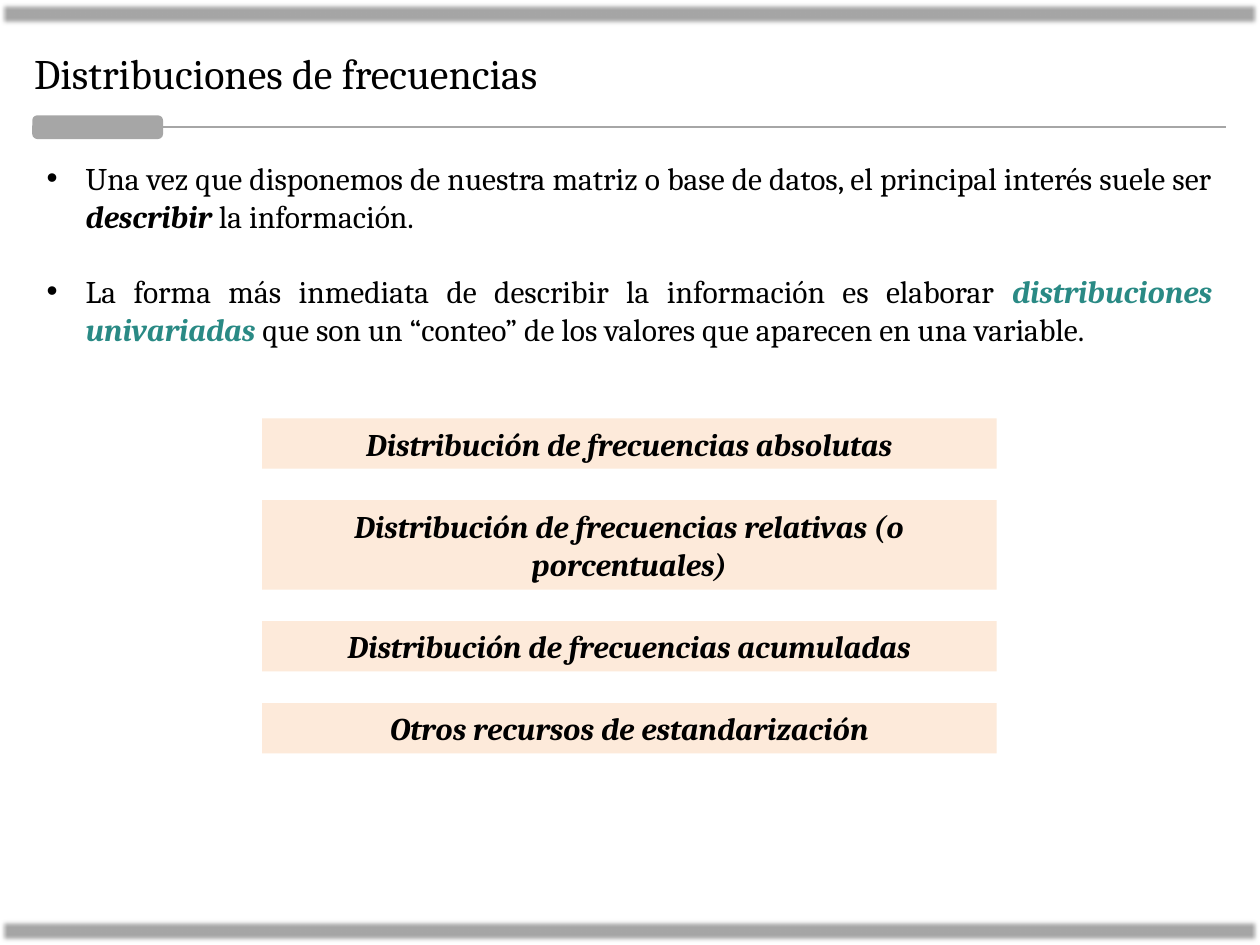
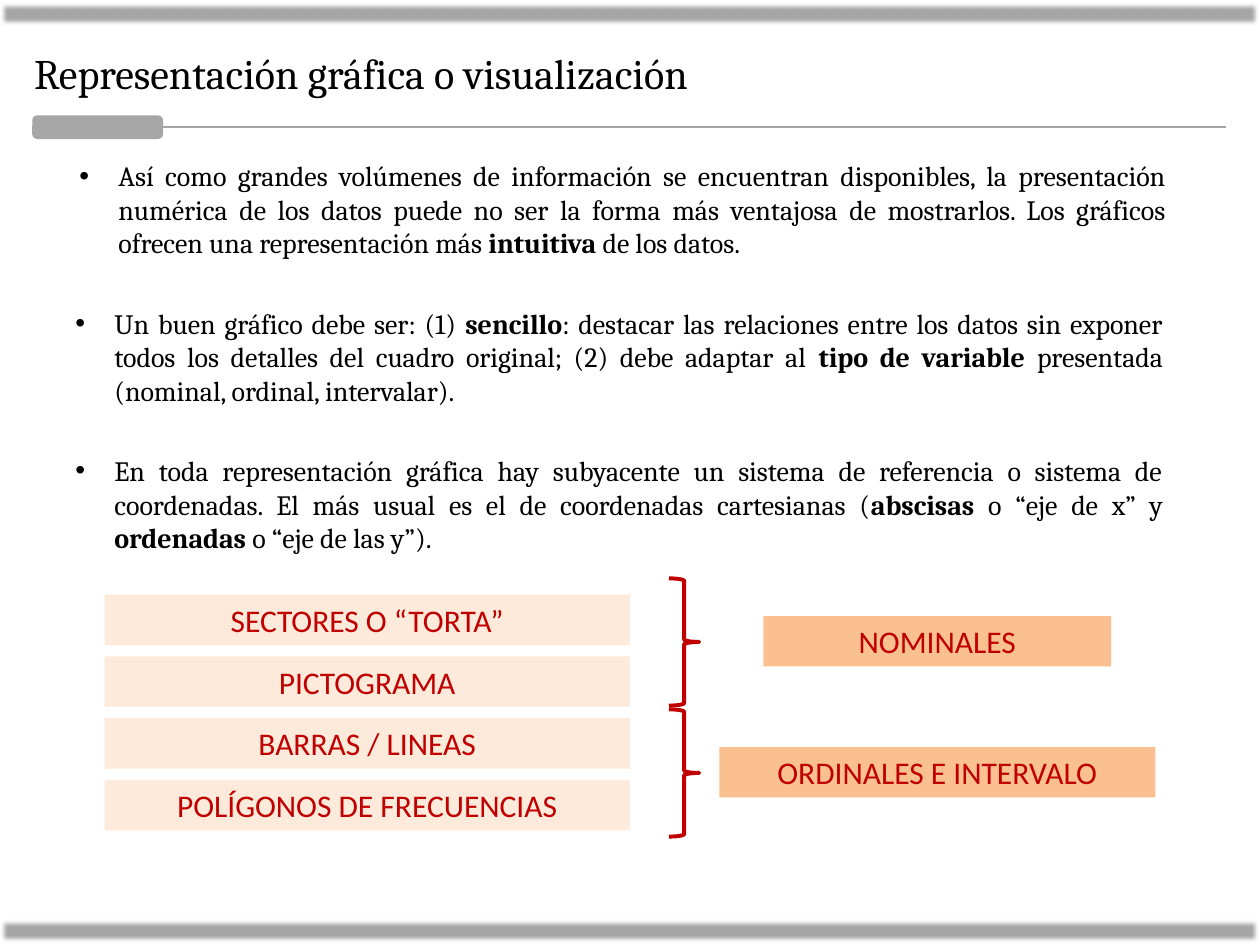
from lxml import etree
from pptx import Presentation
from pptx.dml.color import RGBColor as RGB
from pptx.enum.shapes import MSO_CONNECTOR as LINE, MSO_SHAPE as SHAPE
from pptx.enum.text import MSO_ANCHOR as ANCHOR, MSO_AUTO_SIZE as FIT, PP_ALIGN as ALIGN
from pptx.oxml.ns import qn
from pptx.util import Inches, Pt

HUES = {
    "ink": "000000",
    "grey": "A6A6A6",
    "teal": "2A8A85",
    "red": "C00000",
    "cream": "FDEADA",
    "peach": "FAC090",
}
SERIF, SANS = "Cambria", "Calibri"


def hue(name):
    return RGB.from_string(HUES[name])


class Deck:
    """Shared style and the slide being built."""

    def __init__(self):
        self.prs = Presentation()
        self.prs.slide_width, self.prs.slide_height = Inches(10), Inches(7.5)
        self.slide = None

    def start(self, title):
        """Add a slide with its title, bands and heading rule."""
        self.slide = self.prs.slides.add_slide(self.prs.slide_layouts[1])
        head = self.slide.shapes.title
        self.place(head, 0.17, 0.33, 9.56, 0.5)
        head.text_frame.vertical_anchor = ANCHOR.MIDDLE
        para = head.text_frame.paragraphs[0]
        para.text = title
        self.style(para, 24, align=ALIGN.LEFT)
        for top in (0.01, 7.29):
            self.band(top)
        self.shape(SHAPE.ROUNDED_RECTANGLE, 0.27, 0.93, 1.01, 0.16, "grey", "grey", 2)
        self.rule(1.23, 9.73, 1.01)

    def place(self, item, left, top, width, height):
        item.left, item.top = Inches(left), Inches(top)
        item.width, item.height = Inches(width), Inches(height)

    def style(self, para, size, face=SERIF, tint="ink", align=ALIGN.CENTER):
        para.alignment = align
        para.font.size, para.font.name = Pt(size), face
        para.font.color.rgb = hue(tint)

    def shape(self, kind, left, top, width, height, fill=None, line=None, weight=1):
        item = self.slide.shapes.add_shape(
            kind, Inches(left), Inches(top), Inches(width), Inches(height))
        item.shadow.inherit = False
        if fill:
            item.fill.solid()
            item.fill.fore_color.rgb = hue(fill)
        else:
            item.fill.background()
        if line:
            item.line.color.rgb = hue(line)
            item.line.width = Pt(weight)
        else:
            item.line.fill.background()
        return item

    def band(self, top):
        """Draw a full-width grey band with soft edges."""
        item = self.shape(SHAPE.RECTANGLE, 0, top, 10, 0.2, "grey")
        effects = item.element.spPr.find(qn("a:effectLst"))
        etree.SubElement(effects, qn("a:softEdge"), rad=str(Pt(2.5)))

    def rule(self, left, right, top):
        line = self.slide.shapes.add_connector(
            LINE.STRAIGHT, Inches(left), Inches(top), Inches(right), Inches(top))
        line.line.color.rgb = hue("grey")
        line.line.width = Pt(1.25)
        etree.SubElement(line.element.spPr, qn("a:effectLst"))

    def label(self, text, left, top, width, height=0.4, fill="cream",
              face=SANS, tint="red", strong=False):
        item = self.shape(SHAPE.RECTANGLE, left, top, width, height, fill)
        para = item.text_frame.paragraphs[0]
        para.text = text
        self.style(para, 18, face, tint)
        if strong:
            para.font.bold = para.font.italic = True

    def body(self):
        return self.slide.placeholders[1]

    def box(self):
        return self.slide.shapes.add_textbox(0, 0, 0, 0)

    def bullets(self, item, spot, size, items, gap=0, slant=False):
        """Fill a text item; each entry is (text, tint of its |marked| words)."""
        self.place(item, *spot)
        frame = item.text_frame
        frame.word_wrap = True
        frame.auto_size = FIT.SHAPE_TO_FIT_TEXT
        for i, (text, tint) in enumerate(items):
            para = frame.add_paragraph() if i else frame.paragraphs[0]
            para.space_before, para.space_after = Pt(0), Pt(gap)
            self.dot(para)
            self.style(para, size, align=ALIGN.JUSTIFY)
            for j, part in enumerate(text.split("|")):
                run = para.add_run()
                run.text = part
                if j % 2:
                    run.font.bold, run.font.italic = True, slant
                    run.font.color.rgb = hue(tint)

    def dot(self, para):
        """Give a paragraph a hanging round bullet."""
        props = para._p.get_or_add_pPr()
        props.set("marL", str(Inches(0.31)))
        props.set("indent", str(-Inches(0.31)))
        etree.SubElement(props, qn("a:buFont"), typeface="Arial")
        etree.SubElement(props, qn("a:buChar"), char="•")


def tables(deck):
    """Build the slide on frequency distributions."""
    deck.start("Distribuciones de frecuencias")
    deck.bullets(deck.body(), (0.27, 1.21, 9.45, 1.62), 18, [
        ("Una vez que disponemos de nuestra matriz o base de datos, el principal "
         "interés suele ser |describir| la información.", "ink"),
        ("La forma más inmediata de describir la información es elaborar "
         "|distribuciones univariadas| que son un “conteo” de los valores que "
         "aparecen en una variable.", "teal"),
    ], gap=21.5, slant=True)
    top = 3.32
    for text, height in (
        ("Distribución de frecuencias absolutas", 0.4),
        ("Distribución de frecuencias relativas (o porcentuales)", 0.71),
        ("Distribución de frecuencias acumuladas", 0.4),
        ("Otros recursos de estandarización", 0.4),
    ):
        deck.label(text, 2.08, top, 5.83, height, face=SERIF, tint="ink", strong=True)
        top += height + 0.25


def graphs(deck):
    """Build the slide on graphs and the variables they suit."""
    deck.start("Representación gráfica o visualización")
    notes = (
        "Así como grandes volúmenes de información se encuentran disponibles, la "
        "presentación numérica de los datos puede no ser la forma más ventajosa de "
        "mostrarlos. Los gráficos ofrecen una representación más |intuitiva| de los datos.",
        "Un buen gráfico debe ser: (1) |sencillo|: destacar las relaciones entre los "
        "datos sin exponer todos los detalles del cuadro original; (2) debe adaptar al "
        "|tipo de variable |presentada (nominal, ordinal, intervalar).",
        "En toda representación gráfica hay subyacente un sistema de referencia o "
        "sistema de coordenadas. El más usual es el de coordenadas cartesianas "
        "(|abscisas| o “eje de x” y |ordenadas| o “eje de las y”).",
    )
    for i, note in enumerate(notes):
        item = deck.box() if i else deck.body()
        left = 0.5 if i else 0.53
        deck.bullets(item, (left, 1.21 + 1.17 * i, 8.83, 0.91), 16, [(note, "ink")])

    kinds = ("SECTORES O “TORTA”", "PICTOGRAMA", "BARRAS / LINEAS",
             "POLÍGONOS DE FRECUENCIAS")
    for i, kind in enumerate(kinds):
        deck.label(kind, 0.83, 4.72 + 0.49 * i, 4.17)

    scales = (("NOMINALES", 2.76), ("ORDINALES E INTERVALO", 3.46))
    for i, (scale, width) in enumerate(scales):
        top = 4.59 + 1.04 * i
        deck.shape(SHAPE.RIGHT_BRACE, 5.31, top, 0.24, 1.01, line="red", weight=2.25)
        deck.label(scale, 7.44 - width / 2, top + 0.3, width, fill="peach")


def main():
    deck = Deck()
    tables(deck)
    graphs(deck)
    deck.prs.save("out.pptx")


if __name__ == "__main__":
    main()
